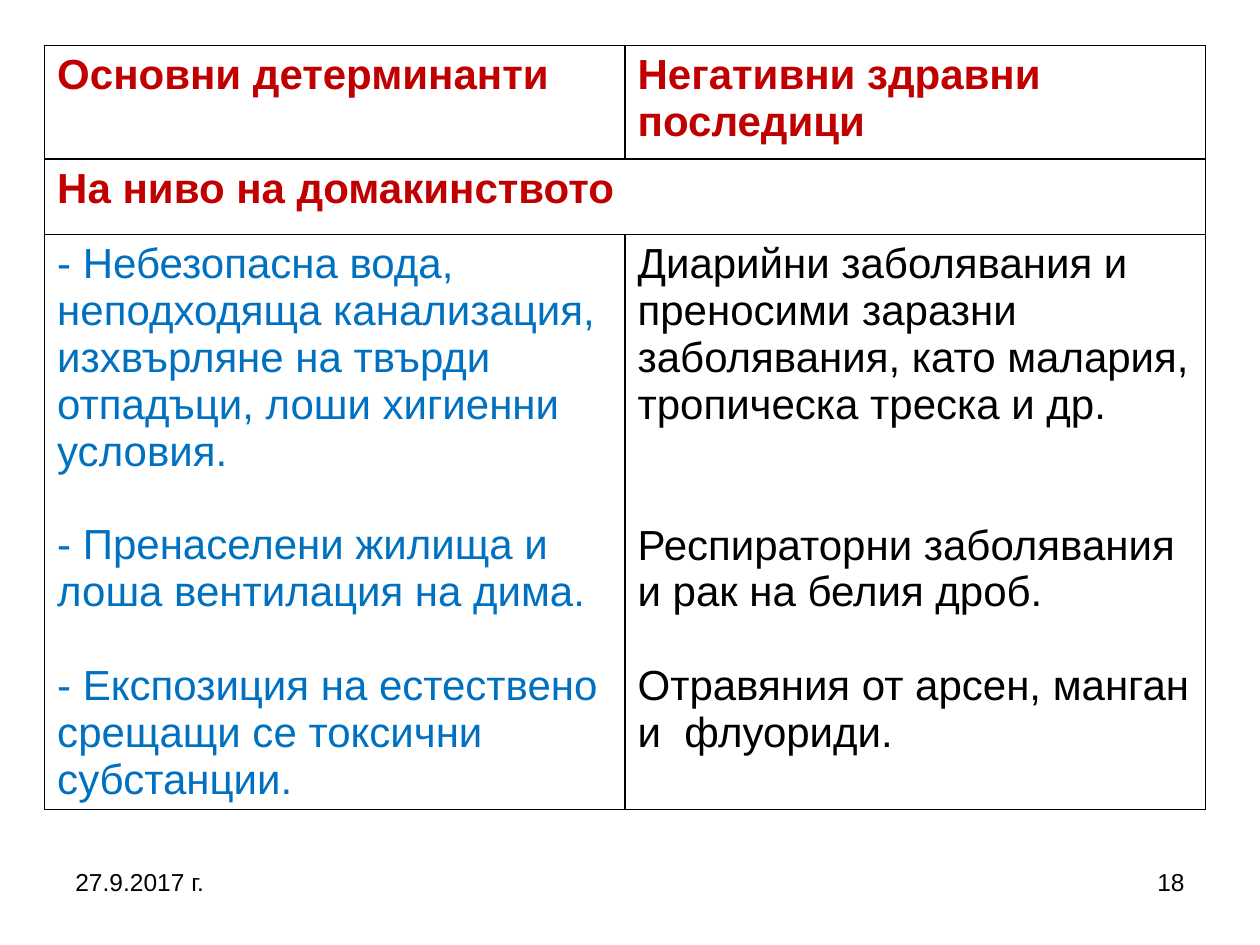
from lxml.etree import SubElement
from pptx import Presentation
from pptx.dml.color import RGBColor
from pptx.enum.text import PP_ALIGN
from pptx.oxml.ns import qn
from pptx.util import Cm, Pt

RED = RGBColor(0xC0, 0x00, 0x00)
BLUE = RGBColor(0x00, 0x70, 0xC0)
BLACK = RGBColor(0x00, 0x00, 0x00)
WHITE = RGBColor(0xFF, 0xFF, 0xFF)

HEADING = {"name": "Arial", "size": Pt(24), "bold": True}
BODY = {"name": "Arial", "size": Pt(24), "bold": False}
FOOTER = {"name": "Arial", "size": Pt(14)}
LINE_HEIGHT = 26.8  # points, one line of 24 pt Arial

ROW_HEIGHTS = (Cm(2.29), Cm(1.52), Cm(11.58))

# Each paragraph: text and the number of free lines above it
DETERMINANTS = [
    ("- Небезопасна вода, неподходяща канализация, изхвърляне на твърди "
     "отпадъци, лоши хигиенни условия.", 0),
    ("- Пренаселени жилища и лоша вентилация на дима.", 1),
    ("- Експозиция на естествено срещащи се токсични субстанции.", 1),
]
CONSEQUENCES = [
    ("Диарийни заболявания и преносими заразни заболявания, като малария, "
     "тропическа треска и др.", 0),
    ("Респираторни заболявания и рак на белия дроб.", 2),
    ("Отравяния от арсен, манган и  флуориди.", 1),
]


def write_paragraphs(text_frame, paragraphs, font_format, color, alignment=PP_ALIGN.LEFT):
    for index, (text, free_lines) in enumerate(paragraphs):
        paragraph = text_frame.paragraphs[0] if index == 0 else text_frame.add_paragraph()
        paragraph.alignment = alignment
        if free_lines:
            paragraph.space_before = Pt(free_lines * LINE_HEIGHT)
        run = paragraph.add_run()
        run.text = text
        for attribute, value in font_format.items():
            setattr(run.font, attribute, value)
        run.font.color.rgb = color


def format_cell(cell):
    """White fill and a thin black border on all sides."""
    cell.fill.solid()
    cell.fill.fore_color.rgb = WHITE
    properties = cell._tc.get_or_add_tcPr()
    for position, side in enumerate(("lnL", "lnR", "lnT", "lnB")):
        line = SubElement(properties, qn(f"a:{side}"), w=str(Pt(1)))
        fill = SubElement(line, qn("a:solidFill"))
        SubElement(fill, qn("a:srgbClr"), val=str(BLACK))
        properties.insert(position, line)  # borders come before the fill


def add_health_table(slide, left, top, width):
    frame = slide.shapes.add_table(len(ROW_HEIGHTS), 2, left, top, width, sum(ROW_HEIGHTS))
    table = frame.table
    for row, height in zip(table.rows, ROW_HEIGHTS):
        row.height = height
    for cell in table.iter_cells():
        format_cell(cell)
    table.cell(1, 0).merge(table.cell(1, 1))

    contents = [
        (0, 0, [("Основни детерминанти", 0)], HEADING, RED),
        (0, 1, [("Негативни здравни последици", 0)], HEADING, RED),
        (1, 0, [("На ниво на домакинството", 0)], HEADING, RED),
        (2, 0, DETERMINANTS, BODY, BLUE),
        (2, 1, CONSEQUENCES, BODY, BLACK),
    ]
    for row, column, paragraphs, font_format, color in contents:
        write_paragraphs(table.cell(row, column).text_frame, paragraphs, font_format, color)


def add_footer(slide, left, top, width, height):
    """Date at the left end, slide number at the right end."""
    box_width = Cm(5.92)
    parts = [
        (left, "27.9.2017 г.", PP_ALIGN.LEFT),
        (left + width - box_width, "18", PP_ALIGN.RIGHT),
    ]
    for box_left, text, alignment in parts:
        text_box = slide.shapes.add_textbox(box_left, top, box_width, height)
        text_box.text_frame.word_wrap = True
        write_paragraphs(text_box.text_frame, [(text, 0)], FOOTER, BLACK, alignment)


def main():
    presentation = Presentation()
    presentation.slide_width = Cm(25.4)
    presentation.slide_height = Cm(19.05)
    slide = presentation.slides.add_slide(presentation.slide_layouts[6])

    add_health_table(slide, Cm(0.9), Cm(0.92), Cm(23.4))
    add_footer(slide, Cm(1.27), Cm(17.35), Cm(22.86), Cm(1.32))

    presentation.save("out.pptx")


if __name__ == "__main__":
    main()
